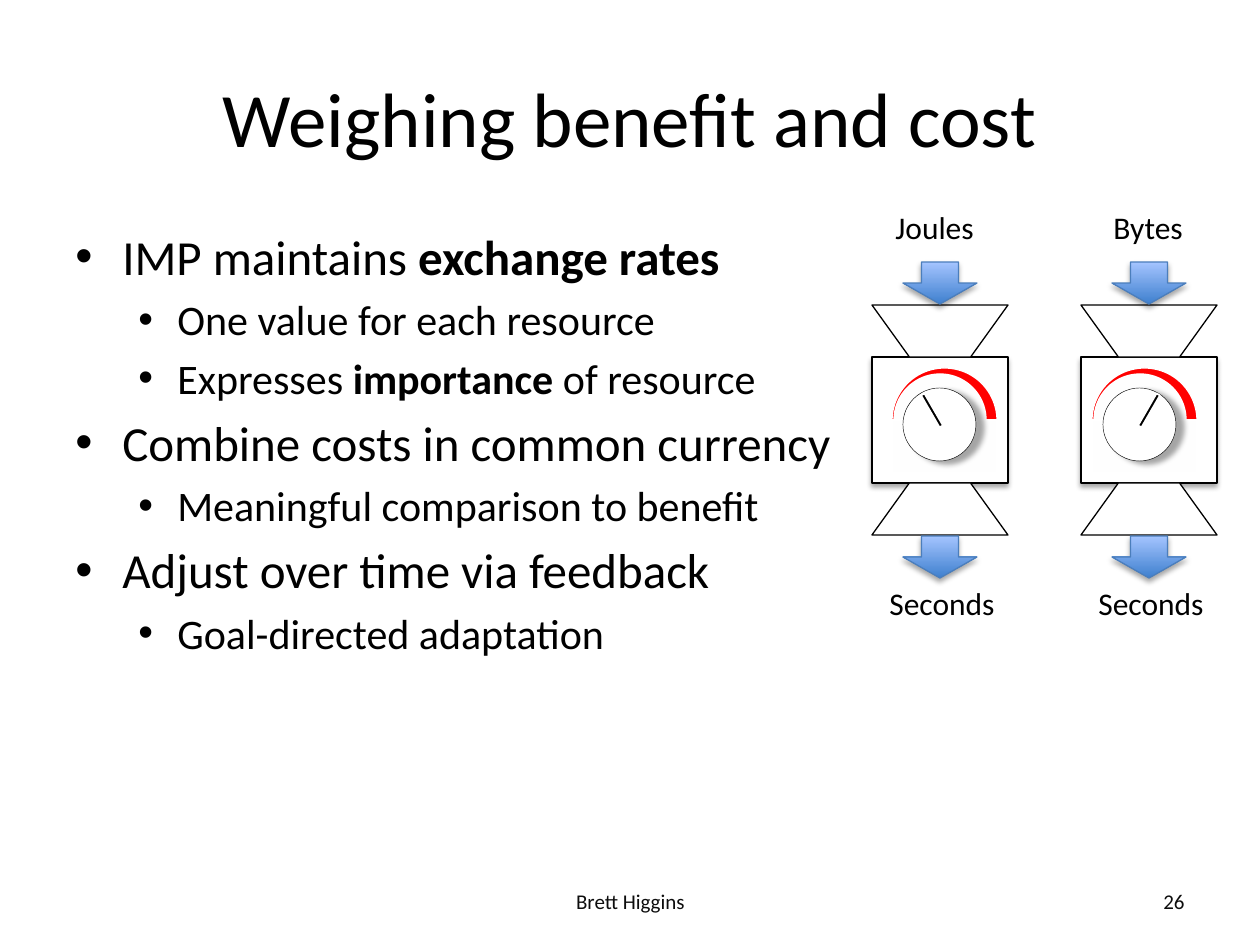
from lxml.etree import SubElement
from pptx import Presentation
from pptx.dml.color import RGBColor
from pptx.enum.shapes import MSO_SHAPE
from pptx.enum.text import MSO_ANCHOR, MSO_AUTO_SIZE, PP_ALIGN
from pptx.oxml.ns import qn
from pptx.util import Pt

PX = 914400 / 126
COLORS = {
    "black": "000000", "white": "FFFFFF", "mask": "FEFEFE", "red": "FF0000",
    "footer": "0D0D0D", "arrow_dark": "3F80CE", "arrow_light": "A4C4FF",
    "arrow_line": "4B7EBC",
}
INDENTS = [(47, -47), (102, -39)]
SOFT_SHADOW = (1.8, 90)
KNOB_SHADOW = (4.8, 24)

deck = Presentation()
deck.slide_width = round(1260 * PX)
deck.slide_height = round(945 * PX)
slide = deck.slides.add_slide(deck.slide_layouts[6])


def add_text(text, at, size, color="black", align=PP_ALIGN.LEFT,
             anchor=MSO_ANCHOR.TOP, wrap=True, level=None, frame=None):
    if frame is None:
        frame = slide.shapes.add_textbox(*[round(v * PX) for v in at]).text_frame
        frame.word_wrap = wrap
        frame.vertical_anchor = anchor
        frame.auto_size = MSO_AUTO_SIZE.NONE if wrap else MSO_AUTO_SIZE.SHAPE_TO_FIT_TEXT
        paragraph = frame.paragraphs[0]
    else:
        paragraph = frame.add_paragraph()
        paragraph.space_before = Pt(size * 0.2)
    paragraph.alignment = align
    if level is not None:
        paragraph.level = level
        properties = paragraph._p.get_or_add_pPr()
        margin, indent = INDENTS[level]
        properties.set("marL", str(round(margin * PX)))
        properties.set("indent", str(round(indent * PX)))
        SubElement(properties, qn("a:buFont"), typeface="Arial")
        SubElement(properties, qn("a:buChar"), char="•")
    for index, part in enumerate(text.split("**")):
        if part:
            run = paragraph.add_run()
            run.text = part
            run.font.name = "Calibri"
            run.font.size = Pt(size)
            run.font.bold = index % 2 == 1
            run.font.color.rgb = RGBColor.from_string(COLORS[color])
    return frame


def add_part(shapes, kind, at, fill="white", line="black", width=0.75,
             rotation=0, shadow=None):
    part = shapes.add_shape(kind, *[round(v * PX) for v in at])
    part.rotation = rotation
    if fill == "gradient":
        part.fill.gradient()
        part.fill.gradient_angle = 90
        for stop, color, position in zip(part.fill.gradient_stops,
                                         ("arrow_dark", "arrow_light"), (0, 1)):
            stop.color.rgb = RGBColor.from_string(COLORS[color])
            stop.position = position
    else:
        part.fill.solid()
        part.fill.fore_color.rgb = RGBColor.from_string(COLORS[fill])
    part.line.color.rgb = RGBColor.from_string(COLORS[line])
    part.line.width = Pt(width)
    part.shadow.inherit = False
    if shadow:
        distance, angle = shadow
        effects = part._element.spPr.find(qn("a:effectLst"))
        outer = SubElement(effects, qn("a:outerShdw"), blurRad=str(Pt(3.1)),
                           dist=str(Pt(distance)), dir=str(angle * 60000),
                           rotWithShape="0")
        tint = SubElement(outer, qn("a:srgbClr"), val=COLORS["black"])
        SubElement(tint, qn("a:alpha"), val="35000")
    return part


add_text("Weighing benefit and cost", (63, 38, 1134, 157), 44,
         align=PP_ALIGN.CENTER, anchor=MSO_ANCHOR.MIDDLE)

points = [
    (0, "IMP maintains **exchange rates**"),
    (1, "One value for each resource"),
    (1, "Expresses **importance** of resource"),
    (0, "Combine costs in common currency"),
    (1, "Meaningful comparison to benefit"),
    (0, "Adjust over time via feedback"),
    (1, "Goal-directed adaptation"),
]
body = None
for level, point in points:
    body = add_text(point, (63, 220, 1134, 624), 28 - 4 * level,
                    level=level, frame=body)

add_text("Brett Higgins", (431, 876, 399, 50), 12, color="footer",
         align=PP_ALIGN.CENTER, anchor=MSO_ANCHOR.MIDDLE)
add_text("26", (903, 876, 294, 50), 12, color="footer",
         align=PP_ALIGN.RIGHT, anchor=MSO_ANCHOR.MIDDLE)

converters = [
    ("Joules", 883, 105, 872, 892, 38, 330),
    ("Bytes", 1101, 96, 1081, 1092, 55, 30),
]
for resource, label_x, label_width, x, dial_x, needle_offset, needle_angle in converters:
    add_part(slide.shapes, MSO_SHAPE.RECTANGLE, (x, 357, 136, 126), shadow=SOFT_SHADOW)

    dial = slide.shapes.add_group_shape().shapes
    add_part(dial, MSO_SHAPE.OVAL, (dial_x, 368, 105, 105), fill="red", line="white")
    add_part(dial, MSO_SHAPE.OVAL, (dial_x + 2, 374, 92, 92), fill="mask", line="white")
    add_part(dial, MSO_SHAPE.RECTANGLE, (dial_x, 420, 105, 53), fill="mask", line="white")
    add_part(dial, MSO_SHAPE.OVAL, (dial_x + 11, 388, 73, 73), width=0.25,
             shadow=KNOB_SHADOW)
    add_part(dial, MSO_SHAPE.RECTANGLE, (dial_x + needle_offset, 392, 4, 37),
             fill="black", line="white", width=1, rotation=needle_angle)

    for funnel_y, arrow_y, rotation in [(305, 262, 180), (483, 536, 0)]:
        funnel = add_part(slide.shapes, MSO_SHAPE.TRAPEZOID, (x, funnel_y, 136, 52),
                          rotation=rotation)
        funnel.adjustments[0] = 0.72
        add_part(slide.shapes, MSO_SHAPE.DOWN_ARROW, (x + 31, arrow_y, 74, 42),
                 fill="gradient", line="arrow_line", shadow=SOFT_SHADOW)

    add_text(resource, (label_x, 202, label_width, 50), 18, wrap=False)
    add_text("Seconds", (x + 5, 578, 132, 50), 18, wrap=False)

deck.save("out.pptx")
